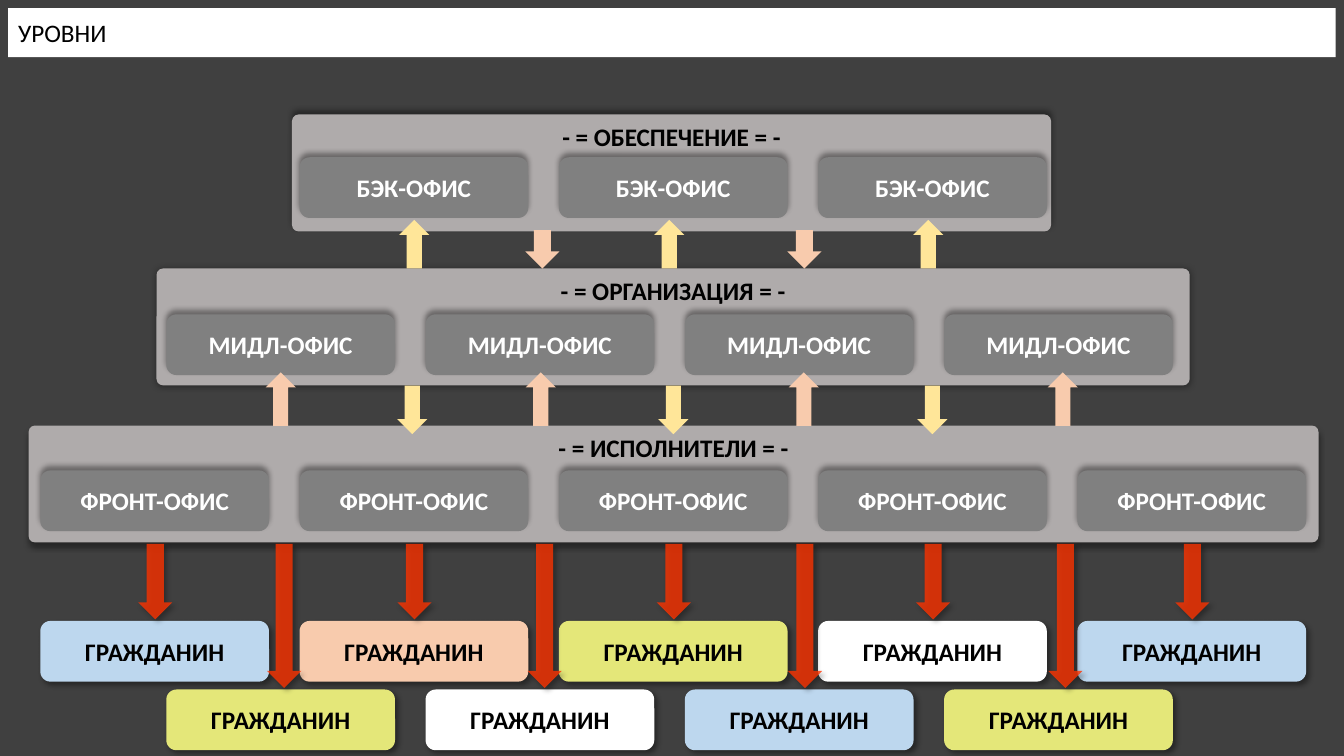
from lxml import etree
from pptx import Presentation
from pptx.dml.color import RGBColor
from pptx.enum.shapes import MSO_SHAPE
from pptx.enum.text import MSO_ANCHOR, PP_ALIGN
from pptx.oxml.ns import qn
from pptx.util import Pt

RECT = MSO_SHAPE.RECTANGLE
ROUND = MSO_SHAPE.ROUNDED_RECTANGLE
UP, DOWN = MSO_SHAPE.UP_ARROW, MSO_SHAPE.DOWN_ARROW
TOP, MIDDLE = MSO_ANCHOR.TOP, MSO_ANCHOR.MIDDLE
LEFT, CENTER = PP_ALIGN.LEFT, PP_ALIGN.CENTER

BLACK, WHITE, GREY, PANEL = "000000", "FFFFFF", "808080", "AFABAB"
BLUE, PEACH, LIME = "BDD7EE", "F8CBAD", "E4E779"
YELLOW, RED = "FFE699", "FF3300"
STEP, CARD_W, CARD_H = 185.2, 163.4, 43.4
OUTER, INNER = 28.8, 118.8  # left edge of the five-card and four-card rows


def draw(shapes, kind, box, fill, alpha=100, shadow=None):
    """Add a borderless shape; shadow is (blur, distance, angle)."""
    shape = shapes.add_shape(kind, *[Pt(v) for v in box])
    shape.fill.solid()
    shape.fill.fore_color.rgb = RGBColor.from_string(fill)
    shape.line.fill.background()
    shape.shadow.inherit = False
    props = shape._element.spPr
    if alpha < 100:
        color = props.find(qn("a:solidFill"))[0]
        etree.SubElement(color, qn("a:alpha"), val=str(alpha * 1000))
    if shadow:
        blur, dist, angle = shadow
        outer = etree.SubElement(
            props.find(qn("a:effectLst")), qn("a:outerShdw"),
            blurRad=str(Pt(blur)), dist=str(Pt(dist)),
            dir=str(angle * 60000), rotWithShape="0")
        color = etree.SubElement(outer, qn("a:srgbClr"), val=BLACK)
        etree.SubElement(color, qn("a:alpha"), val="40000")
    return shape


def write(shape, text, color=BLACK, anchor=MIDDLE, align=CENTER, bold=True):
    frame = shape.text_frame
    frame.word_wrap = True
    frame.vertical_anchor = anchor
    para = frame.paragraphs[0]
    para.text = text
    para.alignment = align
    para.font.name = "Calibri"
    para.font.size = Pt(18)
    para.font.bold = bold
    para.font.color.rgb = RGBColor.from_string(color)


deck = Presentation()
deck.slide_width, deck.slide_height = Pt(960), Pt(540)
slide = deck.slides.add_slide(deck.slide_layouts[6])
slide.background.fill.solid()
slide.background.fill.fore_color.rgb = RGBColor.from_string("404040")
shapes = slide.shapes

# Level panels
panels = [
    ("- = ОБЕСПЕЧЕНИЕ = -", 208.6, 81.8, 542.2, (4, 3, 270)),
    ("- = ОРГАНИЗАЦИЯ = -", 111.8, 191.8, 738, (5, 0, 0)),
    ("- = ИСПОЛНИТЕЛИ = -", 20.4, 304, 921.4, (4, 3, 90)),
]
for text, x, y, width, shadow in panels:
    panel = draw(shapes, ROUND, (x, y, width, 83.5), PANEL, shadow=shadow)
    panel.adjustments[0] = 0.056
    write(panel, text, anchor=TOP)

title = draw(shapes, RECT, (5.8, 5.8, 948.2, 35), WHITE)
write(title, "УРОВНИ", align=LEFT, bold=False)

# Rows of cards: text, text colour, left, top, shadow angle, fills
rows = [
    ("ГРАЖДАНИН", BLACK, OUTER, 443.5, 45, [BLUE, PEACH, LIME, WHITE, BLUE]),
    ("ГРАЖДАНИН", BLACK, INNER, 492.5, 45, [LIME, WHITE, BLUE, LIME]),
    ("ФРОНТ-ОФИС", WHITE, OUTER, 336, 270, [GREY] * 5),
    ("МИДЛ-ОФИС", WHITE, INNER, 224.5, 270, [GREY] * 4),
    ("БЭК-ОФИС", WHITE, OUTER + STEP, 112.3, 270, [GREY] * 3),
]
for text, color, left, top, angle, fills in rows:
    for i, fill in enumerate(fills):
        box = (left + i * STEP, top, CARD_W, CARD_H)
        write(draw(shapes, ROUND, box, fill, shadow=(4, 3, angle)), text, color)

# Red arrows to the citizens: centre of the first, count, step, height
red = shapes.add_group_shape()
for start, count, step, height in [(110.9, 5, STEP, 54), (203, 4, 186, 103)]:
    for i in range(count):
        box = (start + i * step - 12.2, 388.5, 24.4, height)
        draw(red.shapes, DOWN, box, RED, 79, (4, 3, 45))

# Arrows between levels: kind, fill, top, width, height, centres
flows = [
    (UP, PEACH, 266, 21.6, 38.2, [200.5, 386.3, 574.2, 759.2]),
    (UP, YELLOW, 157, 21.6, 34.6, [295.9, 478.1, 663.1]),
    (DOWN, YELLOW, 275.5, 21.6, 34.6, [294.5, 481, 666]),
    (DOWN, PEACH, 164.4, 24.4, 27.4, [387.4, 574.6]),
]
for kind, fill, top, width, height, centres in flows:
    flow = shapes.add_group_shape()
    for x in centres:
        draw(flow.shapes, kind, (x - width / 2, top, width, height), fill)

deck.save("out.pptx")
